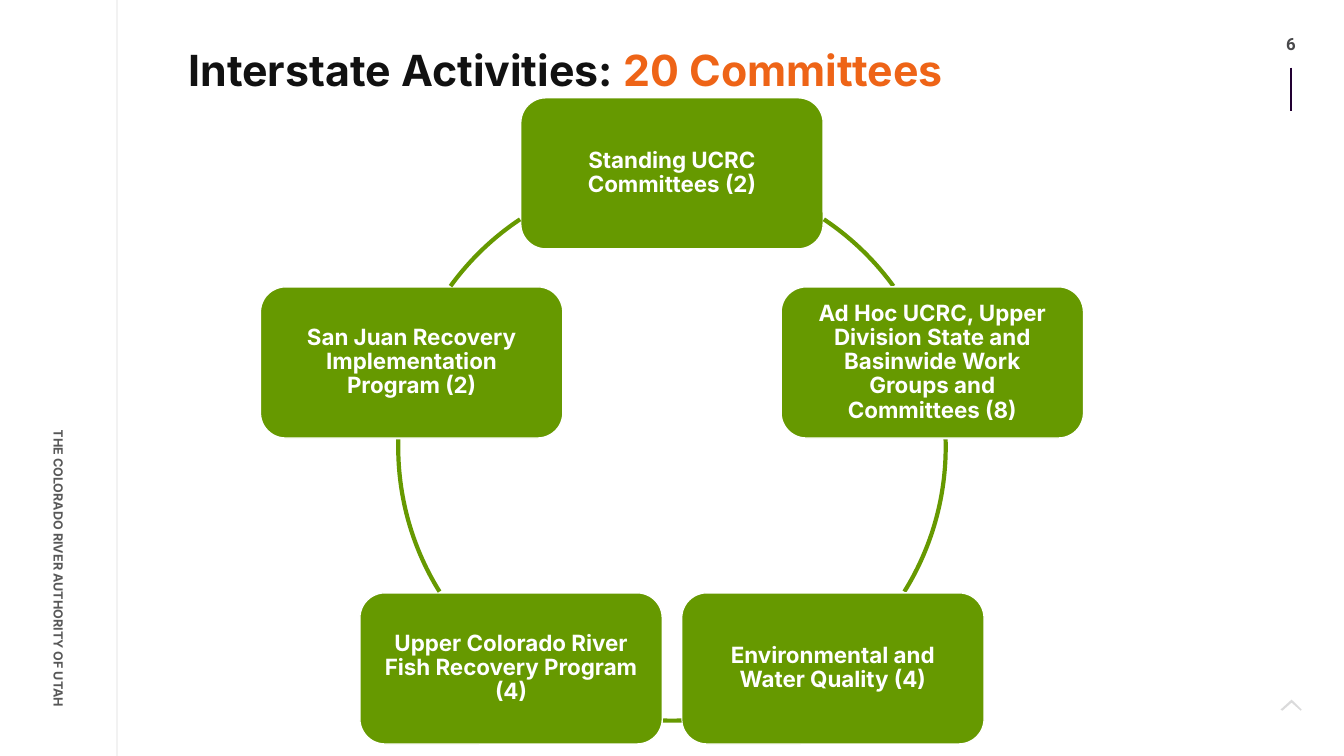
from math import cos, radians, sin

from pptx import Presentation
from pptx.dml.color import RGBColor
from pptx.enum.shapes import MSO_CONNECTOR, MSO_SHAPE
from pptx.enum.text import MSO_ANCHOR, PP_ALIGN
from pptx.oxml.ns import qn
from pptx.util import Inches, Pt
from lxml import etree

LINE = MSO_CONNECTOR.STRAIGHT
ROUND, ARC = MSO_SHAPE.ROUNDED_RECTANGLE, MSO_SHAPE.ARC
TOP, MID = MSO_ANCHOR.TOP, MSO_ANCHOR.MIDDLE
LEFT, MIDST, RIGHT = PP_ALIGN.LEFT, PP_ALIGN.CENTER, PP_ALIGN.RIGHT

INK = RGBColor(0x11, 0x11, 0x11)
GRAY = RGBColor(0x49, 0x49, 0x4B)
PLUM = RGBColor(0x22, 0x00, 0x33)
ORANGE = RGBColor(0xEE, 0x64, 0x17)
GREEN = RGBColor(0x66, 0x99, 0x00)
WHITE = RGBColor(0xFF, 0xFF, 0xFF)

# Content
TITLE = [("Interstate Activities: ", INK), ("20 Committees", ORANGE)]
OWNER = "THE COLORADO RIVER AUTHORITY OF UTAH"
PAGE = "6"
GROUPS = [  # clockwise from the top
    "Standing UCRC Committees (2)",
    "Ad Hoc UCRC, Upper Division State and Basinwide Work Groups and Committees (8)",
    "Environmental and Water Quality (4)",
    "Upper Colorado River Fish Recovery Program (4)",
    "San Juan Recovery Implementation Program (2)",
]

# Geometry in inches and degrees
RING_X, RING_Y, RING = 3.95, 1.72, 5.43
BOX_W, BOX_H = 3, 1.5
ARCS = [(303.7, 324), (358.4, 31.9), (88, 92), (148.1, 181.6), (216, 236.3)]
RULES = [  # x, top, bottom, colour, width, opacity
    (1.16, 0, 7.5, GRAY, 0.5, 20),
    (12.8, 0.67, 1.1, PLUM, 1.5, 100),
]
ARROW = [(12.81, 6.94), (12.91, 7.04), (12.9, 7.05),
         (12.81, 6.97), (12.72, 7.05), (12.7, 7.04)]


def put(obj, **vals):
    for key, val in vals.items():
        setattr(obj, key, val)


def fade(fill, pct):
    """Set the opacity of a solid fill."""
    tone = fill._xPr.find(qn("a:solidFill"))[0]
    etree.SubElement(tone, qn("a:alpha"), val=str(pct * 1000))


def stroke(shape, tone, width):
    shape.line.color.rgb = tone
    shape.line.width = Pt(width)


def paint(shape, tone):
    shape.shadow.inherit = False
    shape.fill.solid()
    shape.fill.fore_color.rgb = tone


def write(shape, runs, size, face="Inter", align=LEFT, anchor=TOP,
          pad=(0, 0.05), space=1.0, wrap=True):
    """Fill a shape with one paragraph of bold runs."""
    side, edge = map(Inches, pad)
    frame = shape.text_frame
    put(frame, margin_left=side, margin_right=side, margin_top=edge,
        margin_bottom=edge, vertical_anchor=anchor, word_wrap=wrap)
    para = frame.paragraphs[0]
    put(para, alignment=align, line_spacing=space)
    for text, tone in runs:
        run = para.add_run()
        run.text = text
        put(run.font, name=face, size=Pt(size), bold=True)
        run.font.color.rgb = tone
    return run


def corner(i):
    """Give the top left of a committee box on the ring."""
    turn = radians(-90 + i * 360 / len(GROUPS))
    half = RING / 2
    return (RING_X + half + half * cos(turn) - BOX_W / 2,
            RING_Y + half + half * sin(turn) - BOX_H / 2)


def main():
    deck = Presentation()
    put(deck, slide_width=Inches(13.33), slide_height=Inches(7.5))
    slide = deck.slides.add_slide(deck.slide_layouts[5])
    shapes = slide.shapes

    # Margin rules
    for x, top, end, tone, width, pct in RULES:
        rule = shapes.add_connector(LINE, *map(Inches, (x, top, x, end)))
        stroke(rule, tone, width)
        if pct < 100:
            fade(rule.line.fill, pct)
        etree.SubElement(rule._element.spPr, qn("a:effectLst"))

    # Side label and page number
    side = shapes.add_textbox(*map(Inches, (-0.84, 5.47, 2.84, 0.25)))
    side.rotation = 90
    run = write(side, [(OWNER, INK)], 9, align=RIGHT)
    fade(run.font.fill, 70)
    page = shapes.add_textbox(*map(Inches, (12.45, 0.26, 0.71, 0.36)))
    write(page, [(PAGE, GRAY)], 12, "Roboto", MIDST, MID, (0.13, 0.07),
          wrap=False)

    # Up arrow
    spots = [(Inches(x), Inches(y)) for x, y in ARROW]
    path = shapes.build_freeform(*spots[0])
    path.add_line_segments(spots[1:], close=True)
    arrow = path.convert_to_shape()
    paint(arrow, GRAY)
    fade(arrow.fill, 20)
    arrow.line.fill.background()

    # Title
    title = shapes.title
    put(title, left=Inches(1.87), top=Inches(0.44), width=Inches(10),
        height=Inches(0.61))
    write(title, TITLE, 30.6, space=0.9)

    # Ring of committees
    for i, (name, ends) in enumerate(zip(GROUPS, ARCS)):
        box = shapes.add_shape(ROUND, *map(Inches, (*corner(i), BOX_W, BOX_H)))
        paint(box, GREEN)
        stroke(box, WHITE, 1)
        write(box, [(name, WHITE)], 16, align=MIDST, anchor=MID,
              pad=(0.14, 0.14), space=0.9)

        arc = shapes.add_shape(ARC, *map(Inches, (RING_X, RING_Y, RING, RING)))
        arc.shadow.inherit = False
        arc.fill.background()
        stroke(arc, GREEN, 3)
        for n, deg in enumerate(ends):
            arc.adjustments[n] = deg * 0.6  # stored in 60000ths of a degree

    deck.save("out.pptx")


if __name__ == "__main__":
    main()
